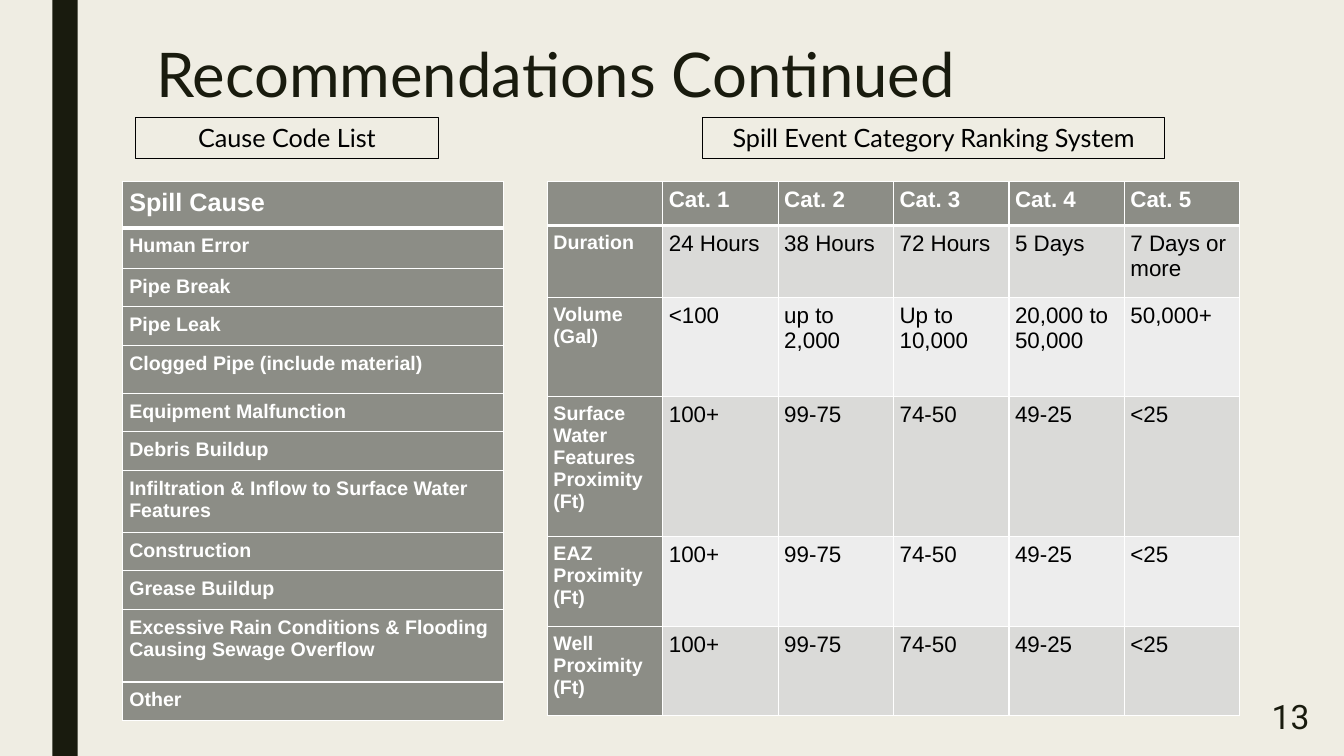
from dataclasses import dataclass

from lxml import etree
from pptx import Presentation
from pptx.dml.color import RGBColor
from pptx.enum.shapes import MSO_SHAPE
from pptx.enum.text import MSO_ANCHOR, MSO_AUTO_SIZE, PP_ALIGN
from pptx.oxml.ns import qn
from pptx.slide import Slide
from pptx.table import _Cell
from pptx.text.text import TextFrame
from pptx.util import Pt

RECTANGLE = MSO_SHAPE.RECTANGLE
TOP, MIDDLE = MSO_ANCHOR.TOP, MSO_ANCHOR.MIDDLE
NO_AUTOFIT = MSO_AUTO_SIZE.NONE
LEFT, CENTER, RIGHT = PP_ALIGN.LEFT, PP_ALIGN.CENTER, PP_ALIGN.RIGHT
TITLE_ONLY = 5
EMU_PER_POINT = 12700


@dataclass(frozen=True)
class TextStyle:
    font: str
    size: float
    color: str
    bold: bool = False


@dataclass(frozen=True)
class Theme:
    background: str = "EFEDE3"
    bar: str = "191B0E"
    outline: str = "000000"
    border: str = "FFFFFF"
    header_fill: str = "8C8D86"
    bands: tuple[str, str] = ("DADAD8", "EDEDED")
    title: TextStyle = TextStyle("Lato", 44, "191B0E")
    caption: TextStyle = TextStyle("Lato", 18, "000000")
    page_number: TextStyle = TextStyle("Roboto", 24, "191B0E")
    cause_header: TextStyle = TextStyle("Arial", 18, "FFFFFF", True)
    category_header: TextStyle = TextStyle("Arial", 16, "FFFFFF", True)
    row_label: TextStyle = TextStyle("Arial", 14, "FFFFFF", True)
    value: TextStyle = TextStyle("Arial", 16, "000000")


@dataclass(frozen=True)
class Box:
    left: float
    top: float
    width: float
    height: float

    def lengths(self) -> tuple[Pt, Pt, Pt, Pt]:
        return Pt(self.left), Pt(self.top), Pt(self.width), Pt(self.height)


@dataclass(frozen=True)
class Caption:
    text: str
    box: Box


@dataclass(frozen=True)
class TableRow:
    height: float
    texts: tuple[str, ...]


@dataclass(frozen=True)
class TableBlock:
    left: float
    top: float
    column_width: float
    margin: float
    header: TextStyle
    rows: tuple[TableRow, ...]


THEME = Theme()
TITLE_BOX = Box(108, 28.8, 756, 117.4)
BAR_BOX = Box(37.4, 0, 18, 540)
PAGE_NUMBER_BOX = Box(904.3, 493.9, 34.6, 35.3)

CAPTIONS = (
    Caption("Spill Event Category Ranking System", Box(501.8, 83.8, 330.3, 29.1)),
    Caption("Cause Code List", Box(96.9, 83.8, 216.2, 29.1)),
)

CAUSES = TableBlock(87.3, 129.6, 272.4, 5.04, THEME.cause_header, (
    TableRow(33.2, ("Spill Cause",)),
    TableRow(28.8, ("Human Error",)),
    TableRow(27.5, ("Pipe Break",)),
    TableRow(27.5, ("Pipe Leak",)),
    TableRow(34.4, ("Clogged Pipe (include material)",)),
    TableRow(27.5, ("Equipment Malfunction",)),
    TableRow(27.5, ("Debris Buildup",)),
    TableRow(44.2, ("Infiltration & Inflow to Surface Water Features",)),
    TableRow(27.5, ("Construction",)),
    TableRow(27.5, ("Grease Buildup",)),
    TableRow(52, ("Excessive Rain Conditions & Flooding Causing Sewage Overflow",)),
    TableRow(27.5, ("Other",)),
))

PROXIMITY_LIMITS = ("100+", "99-75", "74-50", "49-25", "<25")
CATEGORIES = TableBlock(391, 129.6, 82.45, 4.32, THEME.category_header, (
    TableRow(31.5, ("", *(f"Cat. {number}" for number in range(1, 6)))),
    TableRow(51.2, ("Duration", "24 Hours", "38 Hours", "72 Hours", "5 Days",
                    "7 Days or more")),
    TableRow(70.8, ("Volume (Gal)", "<100", "up to 2,000", "Up to 10,000",
                    "20,000 to 50,000", "50,000+")),
    TableRow(100.1, ("Surface Water Features Proximity (Ft)", *PROXIMITY_LIMITS)),
    TableRow(64.1, ("EAZ Proximity (Ft)", *PROXIMITY_LIMITS)),
    TableRow(64.1, ("Well Proximity (Ft)", *PROXIMITY_LIMITS)),
))


def rgb(color: str) -> RGBColor:
    return RGBColor.from_string(color)


def write_text(frame: TextFrame, text: str, style: TextStyle,
               alignment: PP_ALIGN = LEFT) -> None:
    frame.text = text
    paragraph = frame.paragraphs[0]
    paragraph.alignment = alignment
    font = paragraph.font
    font.name, font.size, font.bold = style.font, Pt(style.size), style.bold
    font.color.rgb = rgb(style.color)


def set_frame(frame: TextFrame, anchor: MSO_ANCHOR, wrap: bool = True) -> None:
    frame.margin_left = frame.margin_right = Pt(3.6)
    frame.margin_top = frame.margin_bottom = Pt(3.6)
    frame.vertical_anchor = anchor
    frame.auto_size = NO_AUTOFIT
    frame.word_wrap = wrap


def add_title(slide: Slide, text: str) -> None:
    title = slide.shapes.title
    title.left, title.top, title.width, title.height = TITLE_BOX.lengths()
    set_frame(title.text_frame, TOP)
    write_text(title.text_frame, text, THEME.title)
    title.text_frame.paragraphs[0].line_spacing = 0.89


def add_bar(slide: Slide) -> None:
    bar = slide.shapes.add_shape(RECTANGLE, *BAR_BOX.lengths())
    bar.shadow.inherit = False
    bar.fill.solid()
    bar.fill.fore_color.rgb = rgb(THEME.bar)
    bar.line.fill.background()


def add_caption(slide: Slide, caption: Caption) -> None:
    shape = slide.shapes.add_shape(RECTANGLE, *caption.box.lengths())
    shape.shadow.inherit = False
    shape.fill.background()
    shape.line.color.rgb = rgb(THEME.outline)
    shape.line.width = Pt(0.75)
    set_frame(shape.text_frame, TOP)
    write_text(shape.text_frame, caption.text, THEME.caption, CENTER)


def add_borders(cell: _Cell, top: float, bottom: float) -> None:
    """Draw all four cell borders; must run before the cell is filled."""
    properties = cell._tc.get_or_add_tcPr()
    for side, width in (("L", 1), ("R", 1), ("T", top), ("B", bottom)):
        line = etree.SubElement(properties, qn(f"a:ln{side}"),
                                w=str(int(width * EMU_PER_POINT)))
        fill = etree.SubElement(line, qn("a:solidFill"))
        etree.SubElement(fill, qn("a:srgbClr"), val=THEME.border)


def add_table(slide: Slide, block: TableBlock) -> None:
    column_count = len(block.rows[0].texts)
    box = Box(block.left, block.top, block.column_width * column_count,
              sum(row.height for row in block.rows))
    table = slide.shapes.add_table(len(block.rows), column_count, *box.lengths()).table
    table.horz_banding = False
    for column in table.columns:
        column.width = Pt(block.column_width)
    for row_index, row in enumerate(block.rows):
        table.rows[row_index].height = Pt(row.height)
        for column_index, text in enumerate(row.texts):
            cell = table.cell(row_index, column_index)
            cell.margin_left = cell.margin_right = Pt(block.margin)
            cell.margin_top = cell.margin_bottom = Pt(block.margin)
            add_borders(cell, top=3 if row_index == 1 else 1,
                        bottom=3 if row_index == 0 else 1)
            if row_index == 0:
                style, fill = block.header, THEME.header_fill
            elif column_index == 0:
                style, fill = THEME.row_label, THEME.header_fill
            else:
                style, fill = THEME.value, THEME.bands[(row_index - 1) % 2]
            cell.fill.solid()
            cell.fill.fore_color.rgb = rgb(fill)
            write_text(cell.text_frame, text, style)


def add_page_number(slide: Slide, number: int) -> None:
    frame = slide.shapes.add_textbox(*PAGE_NUMBER_BOX.lengths()).text_frame
    set_frame(frame, MIDDLE, wrap=False)
    write_text(frame, str(number), THEME.page_number, RIGHT)


def main() -> None:
    presentation = Presentation()
    presentation.slide_width, presentation.slide_height = Pt(960), Pt(540)
    slide = presentation.slides.add_slide(presentation.slide_layouts[TITLE_ONLY])
    slide.background.fill.solid()
    slide.background.fill.fore_color.rgb = rgb(THEME.background)
    add_bar(slide)
    add_title(slide, "Recommendations Continued")
    for block in (CAUSES, CATEGORIES):
        add_table(slide, block)
    for caption in CAPTIONS:
        add_caption(slide, caption)
    add_page_number(slide, 13)
    presentation.save("out.pptx")


if __name__ == "__main__":
    main()
